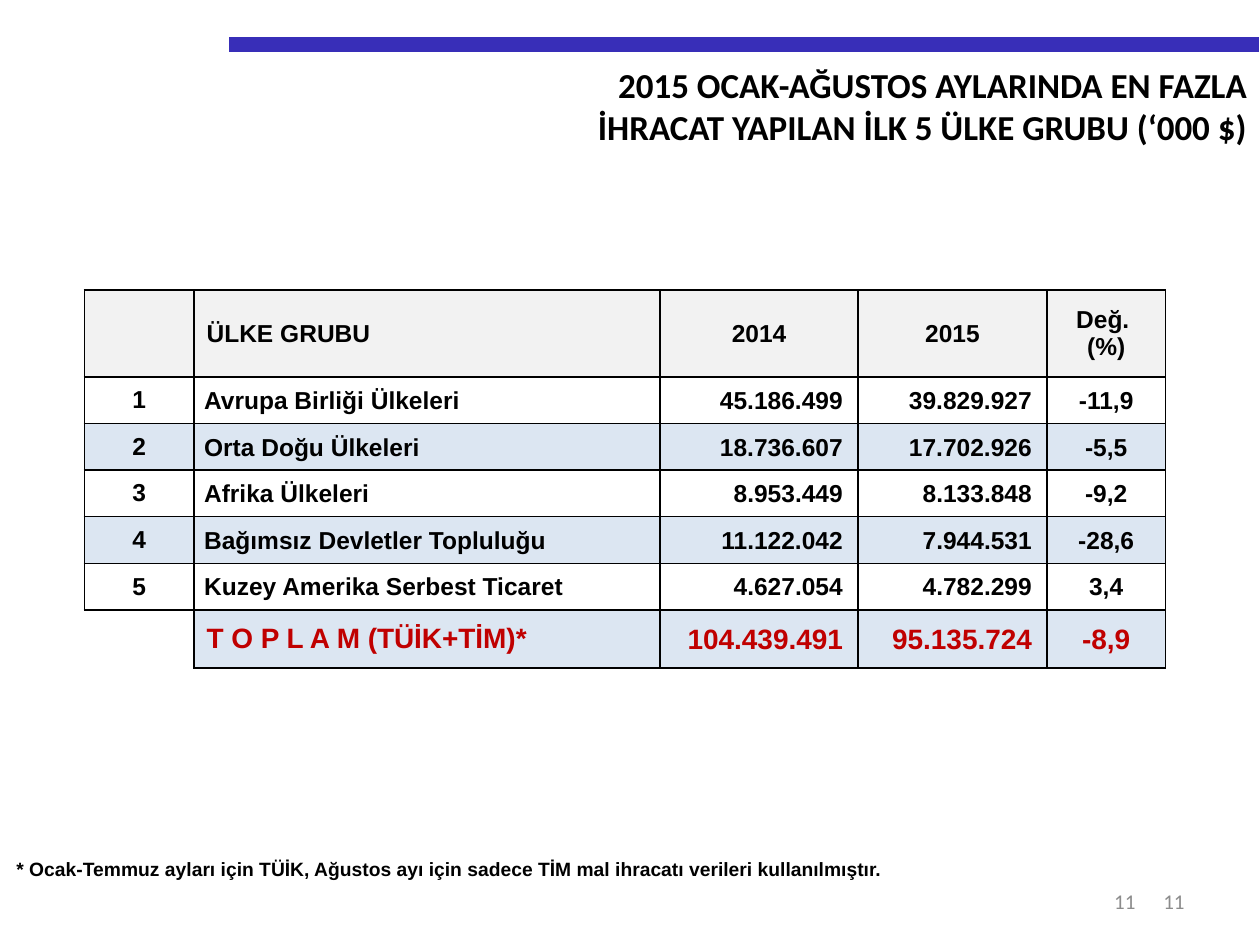
from dataclasses import dataclass
from typing import Optional

from lxml.etree import SubElement
from pptx import Presentation
from pptx.dml.color import RGBColor
from pptx.enum.shapes import MSO_CONNECTOR
from pptx.enum.text import MSO_ANCHOR, PP_ALIGN
from pptx.oxml.ns import qn
from pptx.util import Inches, Pt

SLIDE_WIDTH, SLIDE_HEIGHT = 10, 7.5
LEFT, CENTER, RIGHT = PP_ALIGN.LEFT, PP_ALIGN.CENTER, PP_ALIGN.RIGHT


@dataclass(frozen=True)
class Theme:
    ink: str = "000000"
    bar: str = "382EB8"
    header: str = "F2F2F2"
    band: str = "DCE6F2"
    total: str = "C00000"
    page: str = "8C8C8C"
    heading_font: str = "Calibri"
    table_font: str = "Arial"
    title_size: float = 20
    body_size: float = 14
    total_size: float = 16
    note_size: float = 11
    page_size: float = 12
    bar_width: float = 8.5
    border_width: float = 1


@dataclass(frozen=True)
class Box:
    """Position and size as shares of the slide."""
    left: float
    top: float
    width: float
    height: float

    def emu(self) -> tuple:
        return (Inches(self.left * SLIDE_WIDTH), Inches(self.top * SLIDE_HEIGHT),
                Inches(self.width * SLIDE_WIDTH), Inches(self.height * SLIDE_HEIGHT))


@dataclass(frozen=True)
class TextStyle:
    font: str
    size: float
    color: str
    bold: bool = True


@dataclass(frozen=True)
class CellLook:
    style: TextStyle
    align: PP_ALIGN = LEFT
    insets: Optional[tuple] = None
    fill: Optional[str] = None
    borders: str = "LRTB"


THEME = Theme()
TITLE = TextStyle(THEME.heading_font, THEME.title_size, THEME.ink)
PAGE = TextStyle(THEME.heading_font, THEME.page_size, THEME.page, bold=False)
BODY = TextStyle(THEME.table_font, THEME.body_size, THEME.ink)
TOTAL = TextStyle(THEME.table_font, THEME.total_size, THEME.total)
NOTE = TextStyle(THEME.table_font, THEME.note_size, THEME.ink)

NAME_INSETS = (0.08, 0.01, 0.01, 0)
AMOUNT_INSETS = (0.01, 0.01, 0.12, 0)
TIGHT_INSETS = (0.01, 0.01, 0.01, 0)

TITLE_BOX = Box(0.106, 0.06, 0.894, 0.103)
EXPORT_BOX = Box(0.067, 0.307, 0.858, 0.4)
NOTE_BOX = Box(0.012, 0.899, 0.74, 0.041)
PAGE_BOXES = (Box(0.717, 0.927, 0.233, 0.053), Box(0.701, 0.927, 0.21, 0.053))

TITLE_LINES = "2015 OCAK-AĞUSTOS AYLARINDA EN FAZLA\nİHRACAT YAPILAN İLK 5 ÜLKE GRUBU (‘000 $)"
FOOTNOTE = ("* Ocak-Temmuz ayları için TÜİK, Ağustos ayı için sadece TİM mal "
            "ihracatı verileri kullanılmıştır.")
COLUMNS = (0.87, 3.7, 1.57, 1.5, 0.94)
ROWS = (0.69, *[0.37] * 5, 0.46)
EXPORTS = (
    ("", "ÜLKE GRUBU", "2014", "2015", "Değ. \n(%)"),
    ("1", "Avrupa Birliği Ülkeleri", "45.186.499", "39.829.927", "-11,9"),
    ("2", "Orta Doğu Ülkeleri", "18.736.607", "17.702.926", "-5,5"),
    ("3", "Afrika Ülkeleri", "8.953.449", "8.133.848", "-9,2"),
    ("4", "Bağımsız Devletler Topluluğu", "11.122.042", "7.944.531", "-28,6"),
    ("5", "Kuzey Amerika Serbest Ticaret", "4.627.054", "4.782.299", "3,4"),
    ("", "T O P L A M (TÜİK+TİM)*", "104.439.491", "95.135.724", "-8,9"),
)


def write(frame, text: str, style: TextStyle, align: PP_ALIGN) -> None:
    frame.text = text
    font_format = {"name": style.font, "size": Pt(style.size), "bold": style.bold}
    for paragraph in frame.paragraphs:
        paragraph.alignment = align
        for attribute, value in font_format.items():
            setattr(paragraph.font, attribute, value)
        paragraph.font.color.rgb = RGBColor.from_string(style.color)


def set_borders(cell, sides: str) -> None:
    """Draw the sides named in L, R, T, B and clear the others."""
    properties = cell._tc.get_or_add_tcPr()
    for side in "LRTB":
        border = SubElement(properties, qn(f"a:ln{side}"), w=str(Pt(THEME.border_width)))
        if side in sides:
            fill = SubElement(border, qn("a:solidFill"))
            SubElement(fill, qn("a:srgbClr"), val=THEME.ink)
        else:
            SubElement(border, qn("a:noFill"))


def draw_cell(cell, text: str, look: CellLook) -> None:
    set_borders(cell, look.borders)
    if look.fill:
        cell.fill.solid()
        cell.fill.fore_color.rgb = RGBColor.from_string(look.fill)
    else:
        cell.fill.background()
    cell.vertical_anchor = MSO_ANCHOR.MIDDLE
    if look.insets:
        for side, inset in zip(("left", "top", "right", "bottom"), look.insets):
            setattr(cell, f"margin_{side}", Inches(inset))
    write(cell.text_frame, text, look.style, look.align)


def export_look(row: int, column: int) -> CellLook:
    last = len(ROWS) - 1
    if row == 0:
        return CellLook(BODY, LEFT if column == 1 else CENTER, fill=THEME.header)
    if column == 0 and row == last:
        return CellLook(BODY, borders="TR")
    style = TOTAL if row == last else BODY
    fill = THEME.band if row % 2 == 0 else None
    if column == 0:
        return CellLook(style, CENTER, fill=fill)
    if column == 1:
        return CellLook(style, LEFT, None if row == last else NAME_INSETS, fill)
    if column == len(COLUMNS) - 1:
        return CellLook(style, CENTER, TIGHT_INSETS, fill)
    return CellLook(style, RIGHT, AMOUNT_INSETS, fill)


def add_plain_table(slide, box: Box, columns: tuple, rows: tuple):
    table = slide.shapes.add_table(len(rows), len(columns), *box.emu()).table
    table.first_row = table.horz_banding = False
    for column, width in zip(table.columns, columns):
        column.width = Inches(width)
    for row, height in zip(table.rows, rows):
        row.height = Inches(height)
    return table


def add_bar(slide) -> None:
    y = Inches(0.35)
    bar = slide.shapes.add_connector(MSO_CONNECTOR.STRAIGHT, Inches(1.82), y, Inches(9.99), y)
    bar.line.color.rgb = RGBColor.from_string(THEME.bar)
    bar.line.width = Pt(THEME.bar_width)
    SubElement(bar._element.spPr, qn("a:effectLst"))


def add_page_number(slide, box: Box) -> None:
    frame = slide.shapes.add_textbox(*box.emu()).text_frame
    frame.word_wrap = True
    frame.vertical_anchor = MSO_ANCHOR.MIDDLE
    write(frame, "11", PAGE, RIGHT)


def place_title(slide) -> None:
    title = slide.shapes.title
    title.left, title.top, title.width, title.height = TITLE_BOX.emu()
    title.text_frame.vertical_anchor = MSO_ANCHOR.TOP
    write(title.text_frame, TITLE_LINES, TITLE, RIGHT)


def main() -> None:
    deck = Presentation()
    deck.slide_width, deck.slide_height = Inches(SLIDE_WIDTH), Inches(SLIDE_HEIGHT)
    slide = deck.slides.add_slide(deck.slide_layouts.get_by_name("Title Only"))
    add_bar(slide)
    for box in PAGE_BOXES:
        add_page_number(slide, box)
    place_title(slide)

    export_table = add_plain_table(slide, EXPORT_BOX, COLUMNS, ROWS)
    for row, values in enumerate(EXPORTS):
        for column, value in enumerate(values):
            draw_cell(export_table.cell(row, column), value, export_look(row, column))

    note_table = add_plain_table(slide, NOTE_BOX, (7.4,), (0.31,))
    draw_cell(note_table.cell(0, 0), FOOTNOTE, CellLook(NOTE, LEFT, TIGHT_INSETS, borders=""))
    deck.save("out.pptx")


if __name__ == "__main__":
    main()
